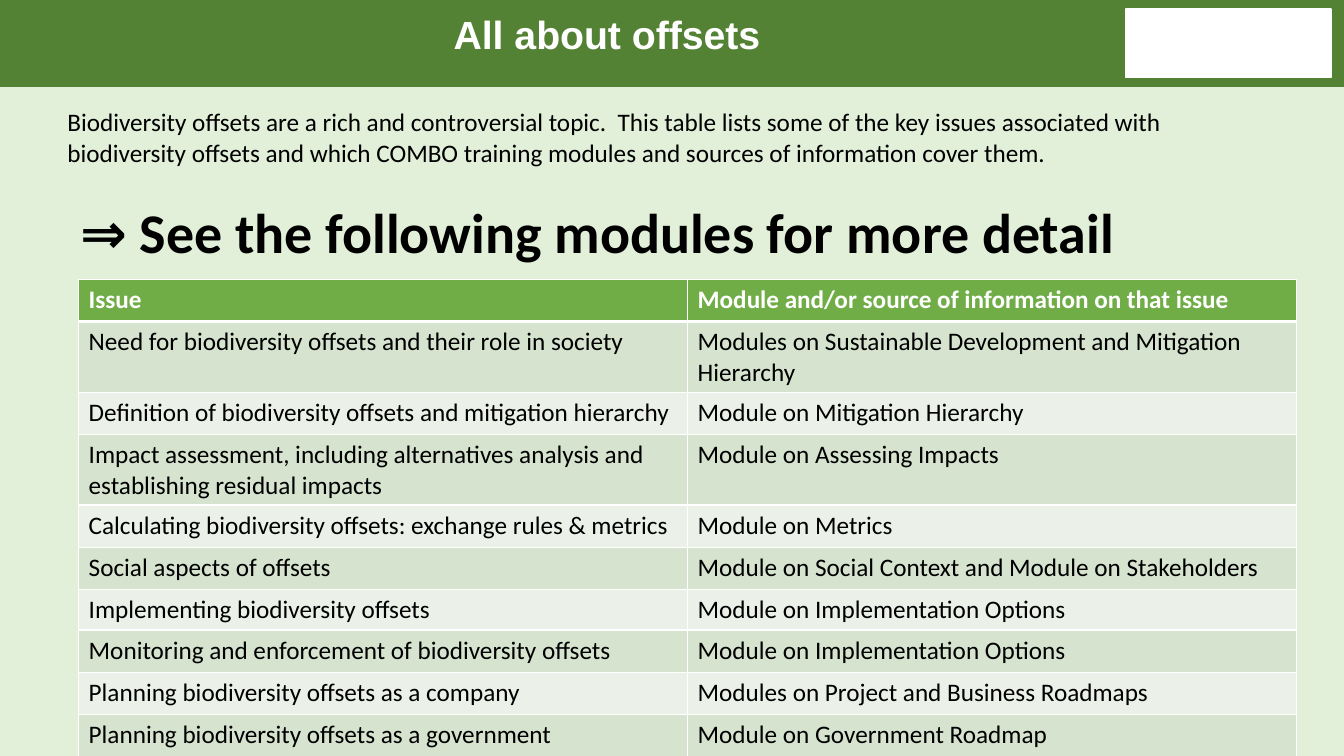
from dataclasses import dataclass

from lxml import etree
from pptx import Presentation
from pptx.dml.color import RGBColor
from pptx.enum.shapes import MSO_SHAPE
from pptx.enum.text import MSO_ANCHOR, MSO_AUTO_SIZE, PP_ALIGN
from pptx.oxml.ns import qn
from pptx.util import Inches, Pt

RECT = MSO_SHAPE.RECTANGLE
MIDDLE = MSO_ANCHOR.MIDDLE
NO_FIT = MSO_AUTO_SIZE.NONE
LEFT, CENTER = PP_ALIGN.LEFT, PP_ALIGN.CENTER

TITLE = "All about offsets"
INTRO = ("Biodiversity offsets are a rich and controversial topic.  This table lists "
         "some of the key issues associated with biodiversity offsets and which COMBO "
         "training modules and sources of information cover them.")
CALLOUT = "⇒ See the following modules for more detail"
ISSUES = [
    ("Issue", "Module and/or source of information on that issue"),
    ("Need for biodiversity offsets and their role in society",
     "Modules on Sustainable Development and Mitigation Hierarchy"),
    ("Definition of biodiversity offsets and mitigation hierarchy",
     "Module on Mitigation Hierarchy"),
    ("Impact assessment, including alternatives analysis and establishing residual impacts",
     "Module on Assessing Impacts"),
    ("Calculating biodiversity offsets: exchange rules & metrics", "Module on Metrics"),
    ("Social aspects of offsets", "Module on Social Context and Module on Stakeholders"),
    ("Implementing biodiversity offsets", "Module on Implementation Options"),
    ("Monitoring and enforcement of biodiversity offsets",
     "Module on Implementation Options"),
    ("Planning biodiversity offsets as a company",
     "Modules on Project and Business Roadmaps"),
    ("Planning biodiversity offsets as a government", "Module on Government Roadmap"),
]
ROW_HEIGHTS = [0.42, 0.6, 0.42, 0.6, 0.42, 0.42, 0.24, 0.42, 0.42, 0.42]
COLUMN_WIDTH = 6.04


@dataclass(frozen=True)
class Theme:
    banner: str = "548235"
    panel: str = "E2F0D9"
    header: str = "70AD47"
    bands: tuple = ("D5E3CF", "EBF1E9")
    white: str = "FFFFFF"
    black: str = "000000"
    heading_font: str = "Arial"
    body_font: str = "Calibri"
    title_size: int = 28
    body_size: int = 18
    callout_size: int = 40
    border: int = 1
    header_border: int = 3


THEME = Theme()


def rgb(value):
    return RGBColor.from_string(value)


def write(p, text, size=THEME.body_size, font=THEME.body_font, color=THEME.black,
          bold=False, align=LEFT, before=0, spacing=1.0):
    p.alignment = align
    p.space_before = Pt(before)
    p.line_spacing = spacing
    r = p.add_run()
    r.text = text
    r.font.size = Pt(size)
    r.font.name = font
    r.font.bold = bold
    r.font.color.rgb = rgb(color)


def add_panel(s, box, fill, line=None):
    sp = s.shapes.add_shape(RECT, *map(Inches, box))
    sp.shadow.inherit = False
    sp.fill.solid()
    sp.fill.fore_color.rgb = rgb(fill)
    if line:
        sp.line.color.rgb = rgb(line)
        sp.line.width = Pt(THEME.border)
    else:
        sp.line.fill.background()


def set_borders(cell, top, bottom):
    tc_pr = cell._tc.get_or_add_tcPr()
    sides = (("lnL", THEME.border), ("lnR", THEME.border), ("lnT", top), ("lnB", bottom))
    for i, (side, width) in enumerate(sides):
        ln = etree.Element(qn(f"a:{side}"), w=str(Pt(width)))
        fill = etree.SubElement(ln, qn("a:solidFill"))
        etree.SubElement(fill, qn("a:srgbClr"), val=THEME.white)
        tc_pr.insert(i, ln)


def add_title(s):
    title = s.shapes.title
    s.shapes.element.append(title.element)
    title.left, title.top, title.width, title.height = map(Inches, (0.87, 0.1, 10.3, 0.53))
    tf = title.text_frame
    tf.auto_size = NO_FIT
    tf.vertical_anchor = MIDDLE
    write(tf.paragraphs[0], TITLE, size=THEME.title_size, font=THEME.heading_font,
          color=THEME.white, bold=True, align=CENTER, spacing=0.9)


def add_intro(s):
    tf = s.shapes.add_textbox(*map(Inches, (0.57, 1.01, 11.94, 1.7))).text_frame
    tf.word_wrap = True
    write(tf.paragraphs[0], INTRO)
    p = tf.add_paragraph()
    p._p.get_or_add_pPr().set("marL", str(Inches(0.13)))
    write(p, CALLOUT, size=THEME.callout_size, bold=True, before=22)


def add_issue_table(s):
    columns = len(ISSUES[0])
    table = s.shapes.add_table(
        len(ISSUES), columns, Inches(0.78), Inches(2.77),
        Inches(columns * COLUMN_WIDTH), Inches(sum(ROW_HEIGHTS))).table
    for column in table.columns:
        column.width = Inches(COLUMN_WIDTH)
    for i, (texts, height) in enumerate(zip(ISSUES, ROW_HEIGHTS)):
        table.rows[i].height = Inches(height)
        header = i == 0
        for j, text in enumerate(texts):
            cell = table.cell(i, j)
            cell.fill.solid()
            cell.fill.fore_color.rgb = rgb(THEME.header if header else THEME.bands[(i - 1) % 2])
            set_borders(cell, top=THEME.header_border if i == 1 else THEME.border,
                        bottom=THEME.header_border if header else THEME.border)
            write(cell.text_frame.paragraphs[0], text, bold=header,
                  color=THEME.white if header else THEME.black)


def main():
    prs = Presentation()
    prs.slide_width, prs.slide_height = Inches(13.33), Inches(7.5)
    s = prs.slides.add_slide(prs.slide_layouts.get_by_name("Title Only"))
    add_panel(s, (0, -0.03, 13.33, 0.9), THEME.banner)
    add_panel(s, (11.17, 0.09, 2.03, 0.68), THEME.white, THEME.white)
    add_panel(s, (-0.16, 0.86, 13.94, 6.75), THEME.panel, THEME.banner)
    add_title(s)
    add_intro(s)
    add_issue_table(s)
    prs.save("out.pptx")


if __name__ == "__main__":
    main()
